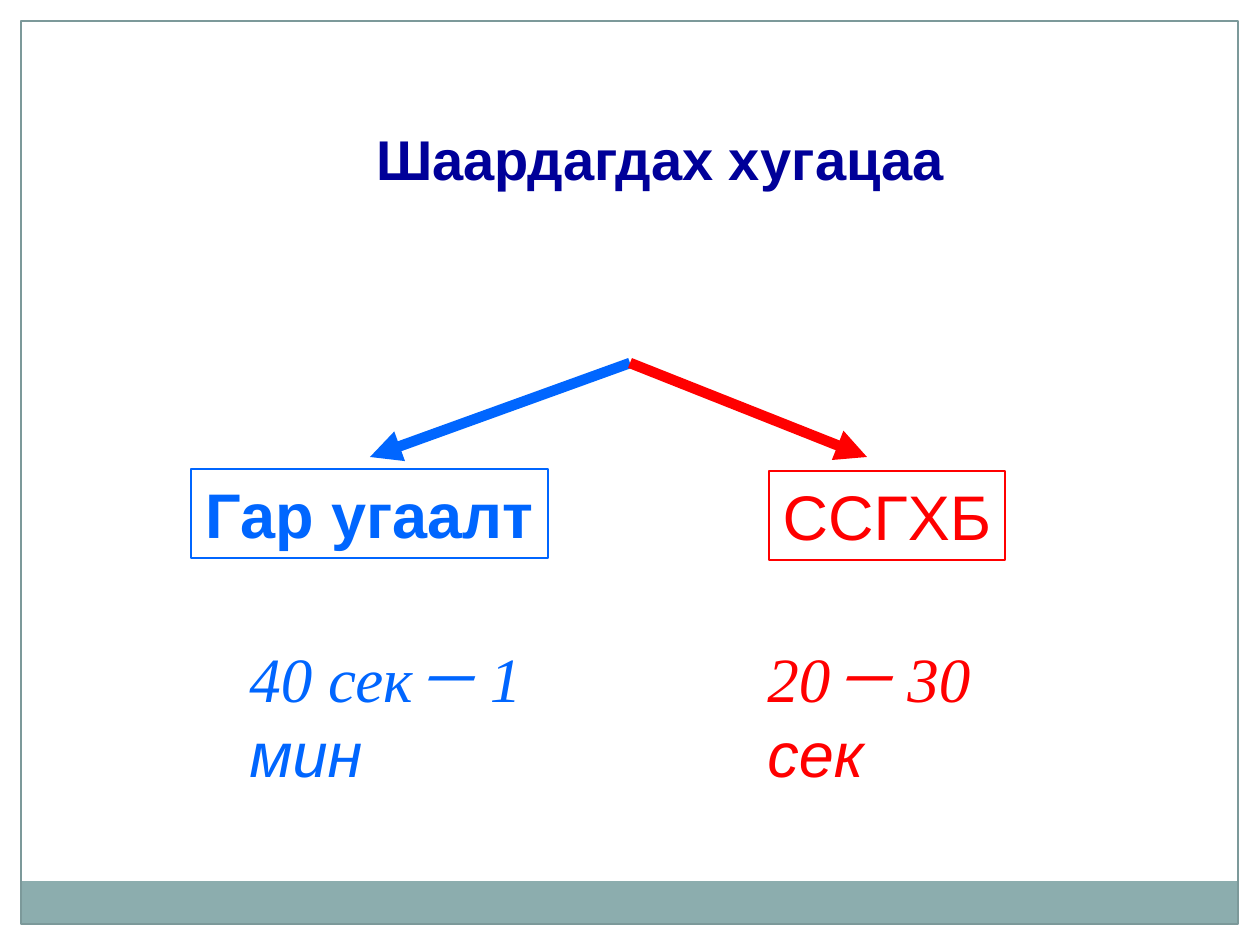
from lxml import etree
from pptx import Presentation
from pptx.dml.color import RGBColor
from pptx.enum.shapes import MSO_CONNECTOR, MSO_SHAPE
from pptx.enum.text import MSO_ANCHOR, MSO_AUTO_SIZE, PP_ALIGN
from pptx.oxml.ns import qn
from pptx.util import Pt

RECTANGLE = MSO_SHAPE.RECTANGLE
STRAIGHT = MSO_CONNECTOR.STRAIGHT
TOP = MSO_ANCHOR.TOP
NO_AUTOFIT = MSO_AUTO_SIZE.NONE
CENTER, LEFT = PP_ALIGN.CENTER, PP_ALIGN.LEFT

PX = 914400 / 126
COLORS = {"white": "FFFFFF", "band": "8CADAE", "border": "7C999A",
          "title": "000099", "washing": "0066FF", "rub": "FF0000"}


def px(*lengths):
    return [round(length * PX) for length in lengths]


def write(shape, runs, color, align, wrap=True, **font_format):
    """Fill the shape with one paragraph of (text, font name) runs."""
    frame = shape.text_frame
    frame.auto_size = NO_AUTOFIT
    frame.word_wrap = wrap
    frame.vertical_anchor = TOP
    paragraph = frame.paragraphs[0]
    paragraph.alignment = align
    for text, font_name in runs:
        run = paragraph.add_run()
        run.text = text
        run.font.color.rgb = RGBColor.from_string(COLORS[color])
        for attribute, value in {"name": font_name, **font_format}.items():
            setattr(run.font, attribute, value)


prs = Presentation()
prs.slide_width, prs.slide_height = px(1260, 945)
slide = prs.slides.add_slide(prs.slide_layouts[5])
shapes = slide.shapes

# White margins, bottom band and border
for fill, place in [
    ("white", (0, 0, 1260, 21)),
    ("white", (1239, 0, 21, 945)),
    ("white", (0, 0, 21, 945)),
    ("band", (21, 881, 1217, 43)),
    (None, (21, 21, 1217, 903)),
]:
    panel = shapes.add_shape(RECTANGLE, *px(*place))
    panel.shadow.inherit = False
    if fill:
        panel.fill.solid()
        panel.fill.fore_color.rgb = RGBColor.from_string(COLORS[fill])
        panel.line.fill.background()
    else:
        panel.fill.background()
        panel.line.color.rgb = RGBColor.from_string(COLORS["border"])
        panel.line.width = Pt(0.75)

title = shapes.title
title.left, title.top, title.width, title.height = px(218, 118, 885, 81)
write(title, [("Шаардагдах хугацаа", "Arial")], "title", CENTER,
      size=Pt(32), bold=True)

# Each method: arrow from the shared origin, framed name, time needed
methods = [
    ("washing", (370, 457), "Гар угаалт", True, (191, 469, 357, 89),
     [("40 сек－ 1 ", "Times New Roman"), ("мин", "Arial")],
     (237, 633, 323, 165)),
    ("rub", (867, 457), "ССГХБ", False, (769, 471, 236, 89),
     [("20－ 30 ", "Times New Roman"), ("сек", "Arial")],
     (755, 633, 290, 165)),
]
for color, arrow_tip, method, bold, method_place, duration, duration_place in methods:
    rgb = RGBColor.from_string(COLORS[color])

    arrow = shapes.add_connector(STRAIGHT, *px(630, 363, *arrow_tip))
    arrow.line.color.rgb = rgb
    arrow.line.width = Pt(6)
    etree.SubElement(arrow.line._get_or_add_ln(), qn("a:tailEnd"), type="triangle")
    etree.SubElement(arrow._element.spPr, qn("a:effectLst"))

    method_box = shapes.add_shape(RECTANGLE, *px(*method_place))
    method_box.shadow.inherit = False
    method_box.fill.background()
    method_box.line.color.rgb = rgb
    method_box.line.width = Pt(0.75)
    write(method_box, [(method, "Arial")], color, CENTER, wrap=False,
          size=Pt(36), bold=bold)

    duration_box = shapes.add_textbox(*px(*duration_place))
    write(duration_box, duration, color, LEFT, size=Pt(36), italic=True)

prs.save("out.pptx")
